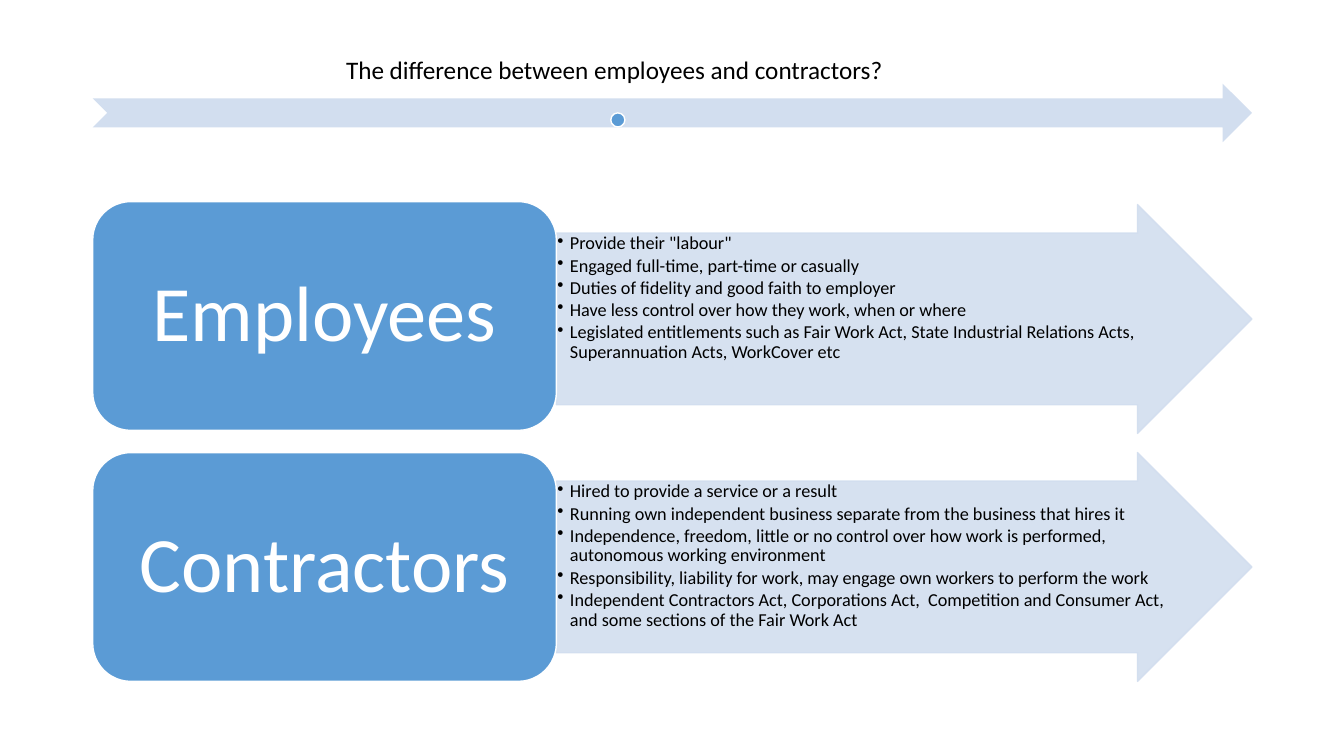
from dataclasses import dataclass

from lxml import etree
from pptx import Presentation
from pptx import util as u
from pptx.dml import color
from pptx.enum import shapes, text
from pptx.oxml import ns

BLUE, PALE, WHITE, BLACK = "5B9BD5", "D2DEEF", "FFFFFF", "000000"
FORM = shapes.MSO_SHAPE
MID = text.PP_ALIGN.CENTER
LEFT, WIDE = 66.24, 828
CARD = 331.2
HIGH = 163.44
BODY = 0.75  # share of an arrow's height taken by its shaft


@dataclass
class Box:
    left: float
    top: float
    width: float
    height: float

    def place(self) -> list:
        return [u.Pt(n) for n in (self.left, self.top, self.width, self.height)]


@dataclass
class Row:
    label: str
    top: float
    tip: float
    points: list[str]


ROWS = [
    Row("Employees", 144, 146.16, [
        'Provide their "labour"',
        "Engaged full-time, part-time or casually",
        "Duties of fidelity and good faith to employer",
        "Have less control over how they work, when or where",
        "Legislated entitlements such as Fair Work Act, State Industrial "
        "Relations Acts, Superannuation Acts, WorkCover etc",
    ]),
    Row("Contractors", 323.28, 323.28, [
        "Hired to provide a service or a result",
        "Running own independent business separate from the business that hires it",
        "Independence, freedom, little or no control over how work is performed, "
        "autonomous working environment",
        "Responsibility, liability for work, may engage own workers to perform the work",
        "Independent Contractors Act, Corporations Act,  Competition and "
        "Consumer Act, and some sections of the Fair Work Act",
    ]),
]


def paint(part, tint: str) -> None:
    part.solid()
    part.fore_color.rgb = color.RGBColor.from_string(tint)


def assign(thing, values: dict) -> None:
    for name, value in values.items():
        setattr(thing, name, value)


def draw(slide, form, box: Box, fill: str, line: str | None = None):
    shape = slide.shapes.add_shape(form, *box.place())
    shape.shadow.inherit = False
    paint(shape.fill, fill)
    if line:
        paint(shape.line.fill, line)
        shape.line.width = u.Pt(1)
    else:
        shape.line.fill.background()
    return shape


def fade(shape, share: int) -> None:
    """Make fill and line opaque to the given percentage."""
    for tint in shape._element.spPr.iter(ns.qn("a:srgbClr")):
        etree.SubElement(tint, ns.qn("a:alpha"), val=str(share * 1000))


def bullet(para) -> None:
    props = para._p.get_or_add_pPr()
    props.set("marL", str(u.Pt(9)))
    props.set("indent", str(-u.Pt(9)))
    etree.SubElement(props, ns.qn("a:buChar"), char="•")


def write(shape, lines: list[str], size: float, tint: str, anchor,
          inset: tuple[float, float], align=None, gap: float = 0) -> None:
    frame = shape.text_frame
    side, edge = (u.Pt(n) for n in inset)
    assign(frame, {
        "word_wrap": True, "vertical_anchor": anchor,
        "margin_left": side, "margin_right": side,
        "margin_top": edge, "margin_bottom": edge,
    })
    for i, line in enumerate(lines):
        para = frame.add_paragraph() if i else frame.paragraphs[0]
        assign(para, {"alignment": align or text.PP_ALIGN.LEFT,
                      "line_spacing": 0.9, "space_after": u.Pt(gap)})
        run = para.add_run()
        run.text = line
        assign(run.font, {"name": "Calibri", "size": u.Pt(size)})
        paint(run.font.fill, tint)


def head(slide) -> None:
    draw(slide, FORM.NOTCHED_RIGHT_ARROW, Box(LEFT, 59.76, WIDE, 41.76), PALE)
    title = slide.shapes.add_textbox(*Box(LEFT, 28.8, 745.2, 41.76).place())
    write(title, ["The difference between employees and contractors?"], 18, BLACK,
          text.MSO_ANCHOR.BOTTOM, (10, 10), MID)
    draw(slide, FORM.OVAL, Box(436.32, 80.64, 10.08, 10.08), BLUE, WHITE)


def band(slide, row: Row) -> None:
    """Draw one labelled card with its arrow of bullet points."""
    start = LEFT + CARD
    arrow = draw(slide, FORM.RIGHT_ARROW,
                 Box(start, row.tip, WIDE - CARD, HIGH), PALE, PALE)
    arrow.adjustments[0] = BODY
    arrow.adjustments[1] = 0.5
    fade(arrow, 90)

    shaft = Box(start, row.tip + HIGH * (1 - BODY) / 2, 435.6, HIGH * BODY)
    notes = slide.shapes.add_textbox(*shaft.place())
    write(notes, row.points, 13, BLACK, text.MSO_ANCHOR.TOP, (0.65, 0.65), gap=1.8)
    for para in notes.text_frame.paragraphs:
        bullet(para)

    card = draw(slide, FORM.ROUNDED_RECTANGLE,
                Box(LEFT, row.top, CARD, HIGH), BLUE, WHITE)
    write(card, [row.label], 56, WHITE, text.MSO_ANCHOR.MIDDLE, (16.5, 8.5), MID)


def main() -> None:
    deck = Presentation()
    assign(deck, {"slide_width": u.Pt(960), "slide_height": u.Pt(540)})
    slide = deck.slides.add_slide(deck.slide_layouts[6])
    head(slide)
    for row in ROWS:
        band(slide, row)
    deck.save("out.pptx")


if __name__ == "__main__":
    main()
